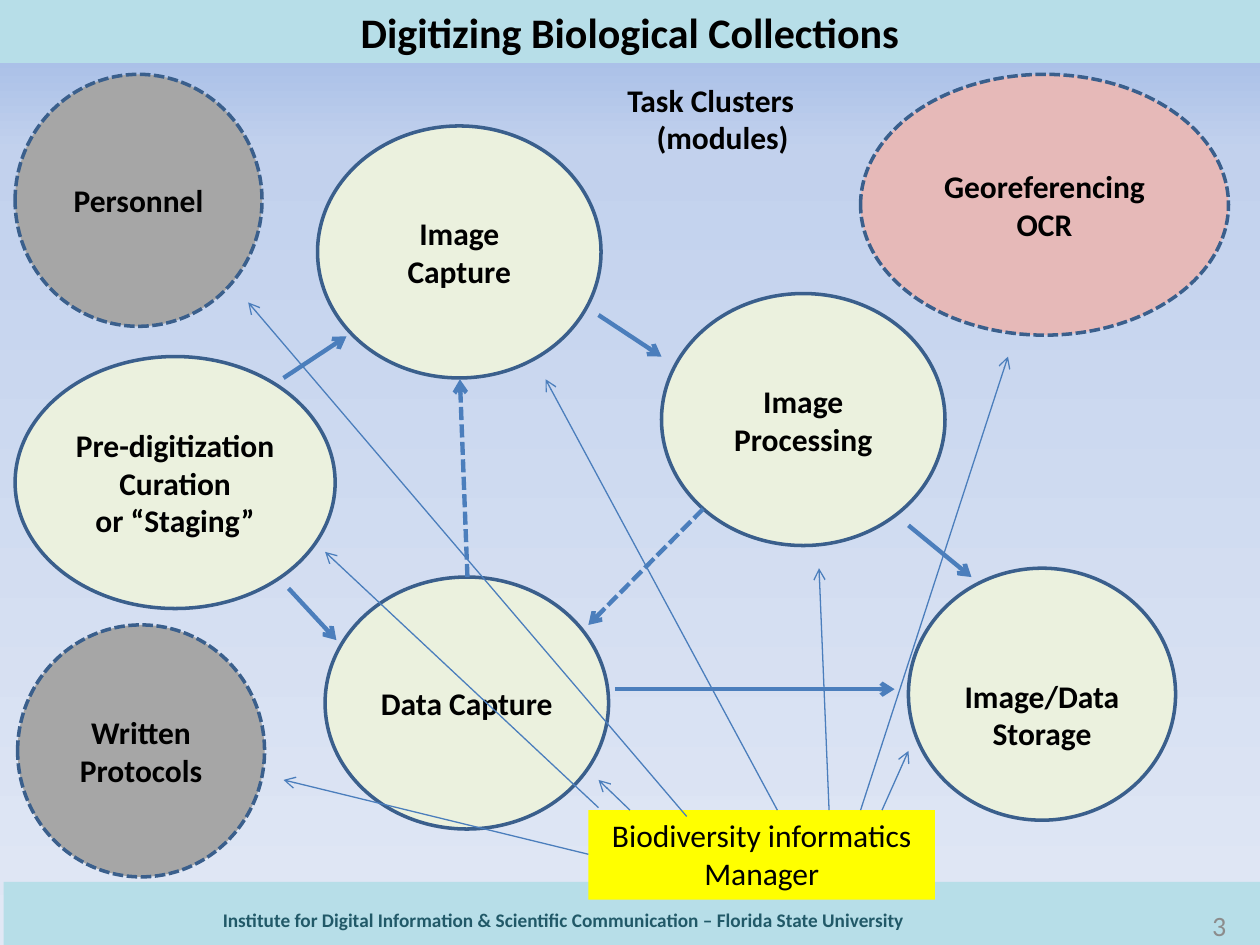
from copy import deepcopy

from lxml import etree
from pptx import Presentation
from pptx import util as u
from pptx.dml.color import RGBColor
from pptx.enum import dml, shapes, text
from pptx.oxml.ns import qn

WIDTH, HEIGHT = 10, 7.5
BAND = 0.5
FONT = "Calibri"

BLACK = RGBColor(0x00, 0x00, 0x00)
AQUA = RGBColor(0xB7, 0xDE, 0xE8)
TEAL = RGBColor(0x21, 0x59, 0x68)
GREEN = RGBColor(0xEB, 0xF1, 0xDE)
PINK = RGBColor(0xE6, 0xB9, 0xB8)
GRAY = RGBColor(0xA6, 0xA6, 0xA6)
NUMBER_GRAY = RGBColor(0x8C, 0x8C, 0x8C)
YELLOW = RGBColor(0xFF, 0xFF, 0x00)
OUTLINE = RGBColor(0x3A, 0x5F, 0x8C)
ARROW = RGBColor(0x4B, 0x7E, 0xBC)
BACKGROUND = [
    (0, RGBColor(0x9A, 0xB5, 0xE4)),
    (0.16, RGBColor(0xC2, 0xD1, 0xED)),
    (1, RGBColor(0xE1, 0xE8, 0xF5)),
]

LEFT, CENTER, RIGHT = text.PP_ALIGN.LEFT, text.PP_ALIGN.CENTER, text.PP_ALIGN.RIGHT
TOP, MIDDLE = text.MSO_ANCHOR.TOP, text.MSO_ANCHOR.MIDDLE
OVAL, RECTANGLE = shapes.MSO_SHAPE.OVAL, shapes.MSO_SHAPE.RECTANGLE

MODULES = [
    (["Pre-digitization Curation", "or “Staging”"], (0.12, 2.83, 2.54, 2), GREEN, False, 0.05),
    (["Image Capture"], (2.52, 1, 2.25, 2), GREEN, False, 0.05),
    (["Data Capture"], (2.58, 4.58, 2.25, 2), GREEN, False, 0.05),
    (["Image Processing"], (5.25, 2.33, 2.25, 2), GREEN, False, 0.05),
    (["Image/Data", "Storage"], (7.21, 4.51, 2.12, 2), GREEN, False, 0.37),
    (["Georeferencing", "OCR"], (6.83, 0.59, 2.92, 2.07), PINK, True, 0.05),
    (["Personnel"], (0.12, 0.59, 1.96, 2), GRAY, True, 0.05),
    (["Written", "Protocols"], (0.14, 4.96, 1.96, 2), GRAY, True, 0.05),
]

WORKFLOW = [
    ((2.25, 3), (2.75, 2.67)),
    ((2.29, 4.67), (2.67, 5.08)),
    ((4.75, 2.5), (5.25, 2.83)),
    ((7.21, 4.17), (7.71, 4.58)),
    ((4.88, 5.47), (7.1, 5.47)),
]
FEEDBACK = [
    ((3.71, 4.58), (3.65, 3.01)),
    ((5.58, 4.04), (4.67, 4.96)),
]
MANAGER_LINKS = [
    ((7, 6.43), (7.21, 5.96)),
    ((6.58, 6.43), (6.5, 4.51)),
    ((6.17, 6.43), (4.33, 3.01)),
    ((5, 6.43), (4.75, 6.19)),
    ((6.83, 6.43), (8, 2.83)),
    ((4.67, 6.78), (2.25, 6.19)),
    ((4.75, 6.41), (2.58, 4.38)),
    ((5.45, 6.48), (1.97, 2.4)),
]


def inches(values):
    return [u.Inches(value) for value in values]


def write(shape, lines, size=18, color=BLACK, bold=True, align=CENTER, anchor=TOP, inset=0.05):
    frame = shape.text_frame
    frame.word_wrap = True
    frame.vertical_anchor = anchor
    frame.margin_top = u.Inches(inset)
    frame.text = "\n".join(lines)
    for paragraph in frame.paragraphs:
        paragraph.alignment = align
        font = paragraph.runs[0].font
        font.name, font.size, font.bold = FONT, u.Pt(size), bold
        font.color.rgb = color


def add_block(slide, kind, box, fill, outlined=False, dashed=False):
    shape = slide.shapes.add_shape(kind, *inches(box))
    shape.shadow.inherit = False
    shape.fill.solid()
    shape.fill.fore_color.rgb = fill
    if outlined:
        shape.line.color.rgb = OUTLINE
        shape.line.width = u.Pt(2)
        if dashed:
            shape.line.dash_style = dml.MSO_LINE.SQUARE_DOT
    else:
        shape.line.fill.background()
    return shape


def add_arrow(slide, start, end, width, dashed=False):
    arrow = slide.shapes.add_connector(shapes.MSO_CONNECTOR.STRAIGHT, *inches(start + end))
    arrow.line.color.rgb = ARROW
    arrow.line.width = u.Pt(width)
    if dashed:
        arrow.line.dash_style = dml.MSO_LINE.SQUARE_DOT
    properties = arrow.element.spPr
    etree.SubElement(properties.find(qn("a:ln")), qn("a:tailEnd"), type="arrow")
    etree.SubElement(properties, qn("a:effectLst"))


def paint_background(slide):
    fill = slide.background.fill
    fill.gradient()
    fill.gradient_angle = 270
    stop_list = slide.element.find(".//" + qn("a:gsLst"))
    stop_list.append(deepcopy(stop_list[-1]))
    for stop, (position, color) in zip(fill.gradient_stops, BACKGROUND):
        stop.position = position
        stop.color.rgb = color


def main():
    presentation = Presentation()
    presentation.slide_width, presentation.slide_height = inches((WIDTH, HEIGHT))
    slide = presentation.slides.add_slide(presentation.slide_layouts[6])
    paint_background(slide)

    add_block(slide, RECTANGLE, (0.03, HEIGHT - BAND, WIDTH, BAND), AQUA)
    title = add_block(slide, RECTANGLE, (0, 0, WIDTH, BAND), AQUA)
    write(title, ["Digitizing Biological Collections"], size=24)
    footer = add_block(slide, RECTANGLE, (1.67, 7.16, 7.47, 0.29), AQUA)
    write(
        footer,
        ["Institute for Digital Information & Scientific Communication – Florida State University"],
        size=11, color=TEAL, align=LEFT,
    )
    number = slide.shapes.add_textbox(*inches((9.14, 7.18, 0.69, 0.32)))
    write(number, ["3"], size=16, color=NUMBER_GRAY, bold=False, align=RIGHT, anchor=MIDDLE)

    for lines, box, fill, dashed, inset in MODULES:
        module = add_block(slide, OVAL, box, fill, outlined=True, dashed=dashed)
        write(module, lines, anchor=MIDDLE, inset=inset)

    manager = add_block(slide, RECTANGLE, (4.67, 6.43, 2.75, 0.71), YELLOW)
    write(manager, ["Biodiversity informatics Manager"], bold=False)

    for links, width, dashed in [
        (WORKFLOW, 2.5, False), (MANAGER_LINKS, 0.75, False), (FEEDBACK, 2.5, True),
    ]:
        for start, end in links:
            add_arrow(slide, start, end, width, dashed)

    caption = slide.shapes.add_textbox(*inches((4.88, 0.59, 1.71, 0.71)))
    write(caption, ["Task Clusters", "(modules)"])
    caption.text_frame.paragraphs[0].alignment = LEFT

    presentation.save("out.pptx")


if __name__ == "__main__":
    main()
